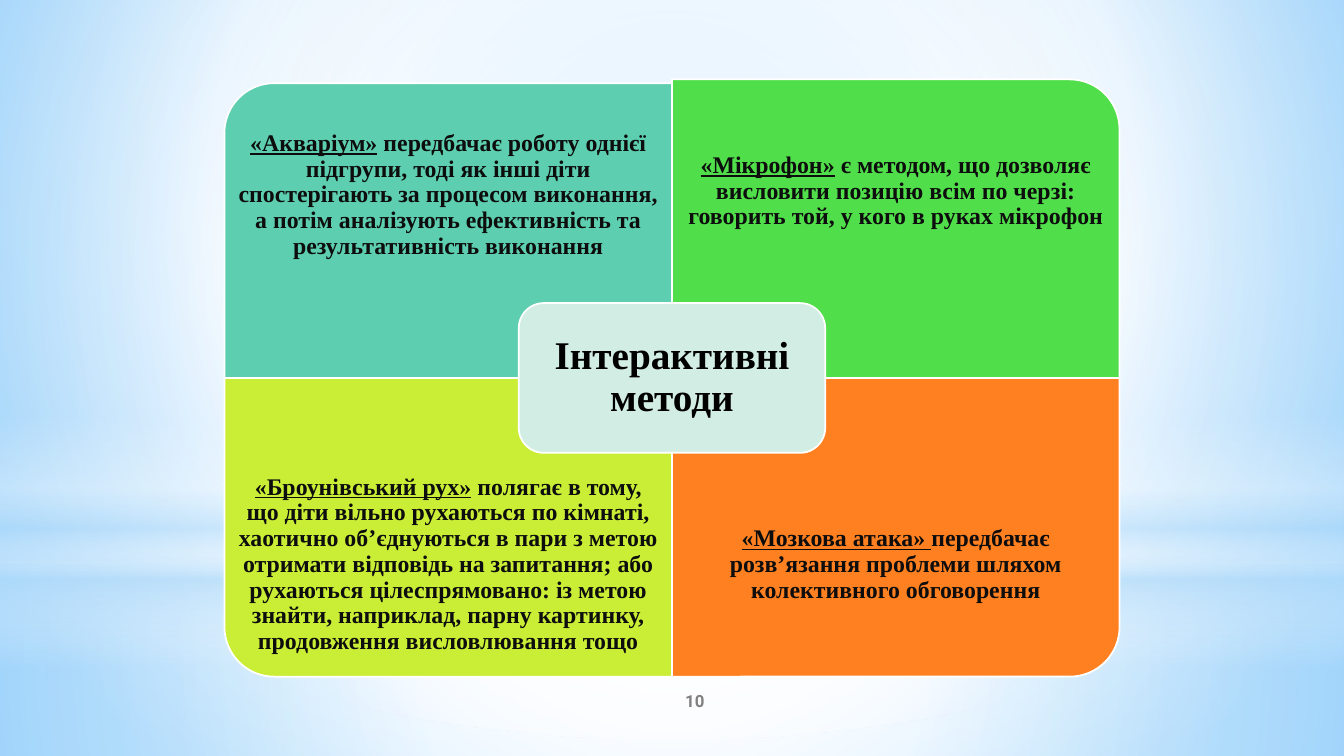
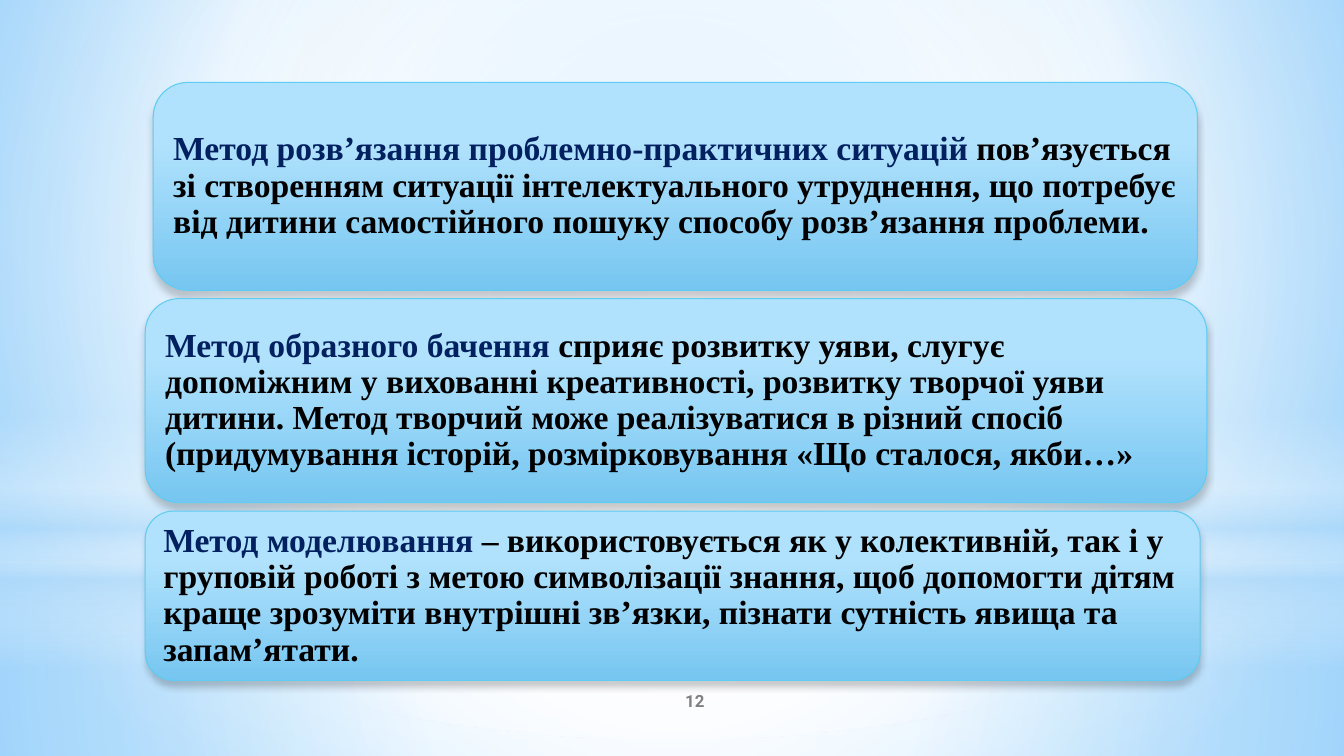
from dataclasses import dataclass

from lxml import etree
from pptx import Presentation
from pptx.dml.color import RGBColor as RGB
from pptx.enum.shapes import MSO_SHAPE as SHAPE
from pptx.enum.text import MSO_ANCHOR as ANCHOR, PP_ALIGN as ALIGN
from pptx.oxml.ns import qn
from pptx.util import Inches, Pt


@dataclass(frozen=True)
class Theme:
    serif: str = "Times New Roman"
    sans: str = "Roboto"
    white: str = "FFFFFF"
    black: str = "000000"
    ink: str = "0D0D0D"
    navy: str = "002060"
    grey: str = "808080"
    sky: str = "B4DCFA"
    hub: str = "D2EDE3"
    card_line: str = "5ECCF3"
    backdrop: tuple = ((0, "9ED5FF", 100), (60, "FFFFFF", 100), (100, "5BB9FF", 100))
    card: tuple = ((28, "B1E2FD", 100), (100, "76C6F1", 100))
    number_size: int = 12
    quad_size: int = 17
    card_size: int = 24
    hub_size: int = 28


T = Theme()


def paint(fill, root, stops, focus=None):
    """Fill with (position, colour, opacity) stops: radial if focus is given, else downward."""
    fill.gradient()
    grad = next(root.iter(qn("a:gradFill")))
    for child in list(grad):
        grad.remove(child)
    gs_list = etree.SubElement(grad, qn("a:gsLst"))
    for pos, color, opacity in stops:
        gs = etree.SubElement(gs_list, qn("a:gs"), pos=str(pos * 1000))
        clr = etree.SubElement(gs, qn("a:srgbClr"), val=color)
        etree.SubElement(clr, qn("a:alpha"), val=str(opacity * 1000))
    if focus:
        path = etree.SubElement(grad, qn("a:path"), path="circle")
        etree.SubElement(path, qn("a:fillToRect"),
                         {side: str(v * 1000) for side, v in zip("ltrb", focus)})
    else:
        etree.SubElement(grad, qn("a:lin"), ang="5400000", scaled="0")


def write(tf, lead, rest="", size=12, font=T.serif, color=T.black, lead_color=None,
          underline=False, align=ALIGN.CENTER, spacing=0.9, inset=0.1):
    """Write one bold paragraph whose lead may be underlined or coloured."""
    tf.word_wrap = True
    tf.vertical_anchor = ANCHOR.MIDDLE
    tf.margin_left = tf.margin_right = tf.margin_top = tf.margin_bottom = Inches(inset)
    p = tf.paragraphs[0]
    p.alignment, p.line_spacing = align, spacing
    for text, c, u in ((lead, lead_color or color, underline), (rest, color, False)):
        if text:
            r = p.add_run()
            r.text = text
            r.font.name, r.font.size, r.font.bold = font, Pt(size), True
            r.font.underline = u
            r.font.color.rgb = RGB.from_string(c)


prs = Presentation()
prs.slide_width, prs.slide_height = Inches(40) // 3, Inches(7.5)
col, row = prs.slide_width // 1000, prs.slide_height // 1000
master = prs.slide_master
methods, cards = [prs.slides.add_slide(prs.slide_layouts[6]) for _ in range(2)]

# Shared backdrop, moved to the master
paint(master.background.fill, master.element, T.backdrop, (20, 10, 20, 60))
center = (50, 50, 50, 50)
layers = [
    (SHAPE.RECTANGLE, 744, 256, center,
     ((0, T.white, 91), (37, T.white, 76), (100, T.sky, 79))),
    (SHAPE.RECTANGLE, 0, 744, center,
     ((0, T.white, 89), (48, T.white, 62), (100, T.sky, 79))),
    (SHAPE.RECTANGLE, 549, 333, None,
     ((0, T.white, 0), (29, T.white, 30), (45, T.sky, 40),
      (55, T.white, 26), (65, T.sky, 60), (100, T.white, 0))),
    (SHAPE.OVAL, 233, 744, center, ((0, T.white, 100), (56, T.white, 0))),
]
for i, (kind, top, height, focus, stops) in enumerate(layers):
    sp = methods.shapes.add_shape(kind, 0, top * row, prs.slide_width, height * row)
    sp.shadow.inherit = False
    sp.line.fill.background()
    paint(sp.fill, sp.element, stops, focus)
    sp.element.nvSpPr.cNvPr.set("id", str(100 + i))
    master.shapes.element.append(sp.element)

# Slide numbers
for s, number in ((methods, "10"), (cards, "12")):
    tb = s.shapes.add_textbox(417 * col, 900 * row, 200 * col, 53 * row)
    write(tb.text_frame, number, size=T.number_size, font=T.sans, color=T.grey,
          spacing=1, inset=0.05)

# Four quadrants around a hub
quad_w, quad_h = 333 * col, 395 * row
mid_x, mid_y = 500 * col, 500 * row
quads = [  # column, row, rotation, drop, fill, lead, rest
    (0, 0, 270, 5, "5DCEAF", "«Акваріум»",
     " передбачає роботу однієї підгрупи, тоді як інші діти спостерігають за процесом "
     "виконання, а потім аналізують ефективність та результативність виконання"),
    (1, 0, 0, 0, "50DE4A", "«Мікрофон»",
     " є методом, що дозволяє висловити позицію всім по черзі: говорить той, "
     "у кого в руках мікрофон"),
    (0, 1, 180, 0, "CAEE36", "«Броунівський рух»",
     " полягає в тому, що діти вільно рухаються по кімнаті, хаотично об’єднуються в пари "
     "з метою отримати відповідь на запитання; або рухаються цілеспрямовано: із метою "
     "знайти, наприклад, парну картинку, продовження висловлювання тощо"),
    (1, 1, 90, 0, "FF8021", "«Мозкова атака» ",
     "передбачає розв’язання проблеми шляхом колективного обговорення"),
]
for c, r, rotation, drop, color, lead, rest in quads:
    x, y = mid_x + (c - 1) * quad_w, mid_y + (r - 1) * quad_h + drop * row
    w, h = (quad_h, quad_w) if rotation % 180 else (quad_w, quad_h)
    sp = methods.shapes.add_shape(SHAPE.ROUND_1_RECTANGLE, x + (quad_w - w) // 2,
                                  y + (quad_h - h) // 2, w, h)
    sp.rotation = rotation
    sp.shadow.inherit = False
    sp.fill.solid()
    sp.fill.fore_color.rgb = RGB.from_string(color)
    sp.line.color.rgb, sp.line.width = RGB.from_string(T.white), Pt(1.25)
    tb = methods.shapes.add_textbox(x, y + r * quad_h // 4, quad_w, quad_h * 3 // 4)
    write(tb.text_frame, lead, rest, size=T.quad_size, color=T.ink, underline=True, inset=0.13)

hub_w, hub_h = 228 * col, 198 * row
hub = methods.shapes.add_shape(SHAPE.ROUNDED_RECTANGLE, mid_x - hub_w // 2,
                               mid_y - hub_h // 2, hub_w, hub_h)
hub.shadow.inherit = False
hub.fill.solid()
hub.fill.fore_color.rgb = RGB.from_string(T.hub)
hub.line.color.rgb, hub.line.width = RGB.from_string(T.white), Pt(1.25)
write(hub.text_frame, "Інтерактивні методи", size=T.hub_size, inset=0.12)

# Three stacked cards
gap, top = 11, 109
stack = [  # left, width, height, lead, rest
    (114, 777, 275, "Метод розв’язання проблемно-практичних ситуацій ",
     "пов’язується зі створенням ситуації інтелектуального утруднення, що потребує від "
     "дитини самостійного пошуку способу розв’язання проблеми."),
    (108, 790, 270, "Метод образного бачення ",
     "сприяє розвитку уяви, слугує допоміжним у вихованні креативності, розвитку творчої "
     "уяви дитини. Метод творчий може реалізуватися в різний спосіб (придумування історій, "
     "розмірковування «Що сталося, якби…»"),
    (108, 785, 224, "Метод моделювання ",
     "– використовується як у колективній, так і у груповій роботі з метою символізації "
     "знання, щоб допомогти дітям краще зрозуміти внутрішні зв’язки, пізнати сутність "
     "явища та запам’ятати."),
]
for left, width, height, lead, rest in stack:
    sp = cards.shapes.add_shape(SHAPE.ROUNDED_RECTANGLE, left * col, top * row,
                                width * col, height * row)
    paint(sp.fill, sp.element, T.card)
    sp.line.color.rgb, sp.line.width = RGB.from_string(T.card_line), Pt(0.75)
    sp.shadow.inherit = False
    effects = next(sp.element.iter(qn("a:effectLst")))
    shadow = etree.SubElement(effects, qn("a:outerShdw"), blurRad=str(Pt(5)),
                              dist=str(Pt(4)), dir="5400000", rotWithShape="0")
    clr = etree.SubElement(shadow, qn("a:srgbClr"), val=T.black)
    etree.SubElement(clr, qn("a:alpha"), val="20000")
    write(sp.text_frame, lead, rest, size=T.card_size, lead_color=T.navy, align=ALIGN.LEFT)
    top += height + gap

prs.save("out.pptx")
